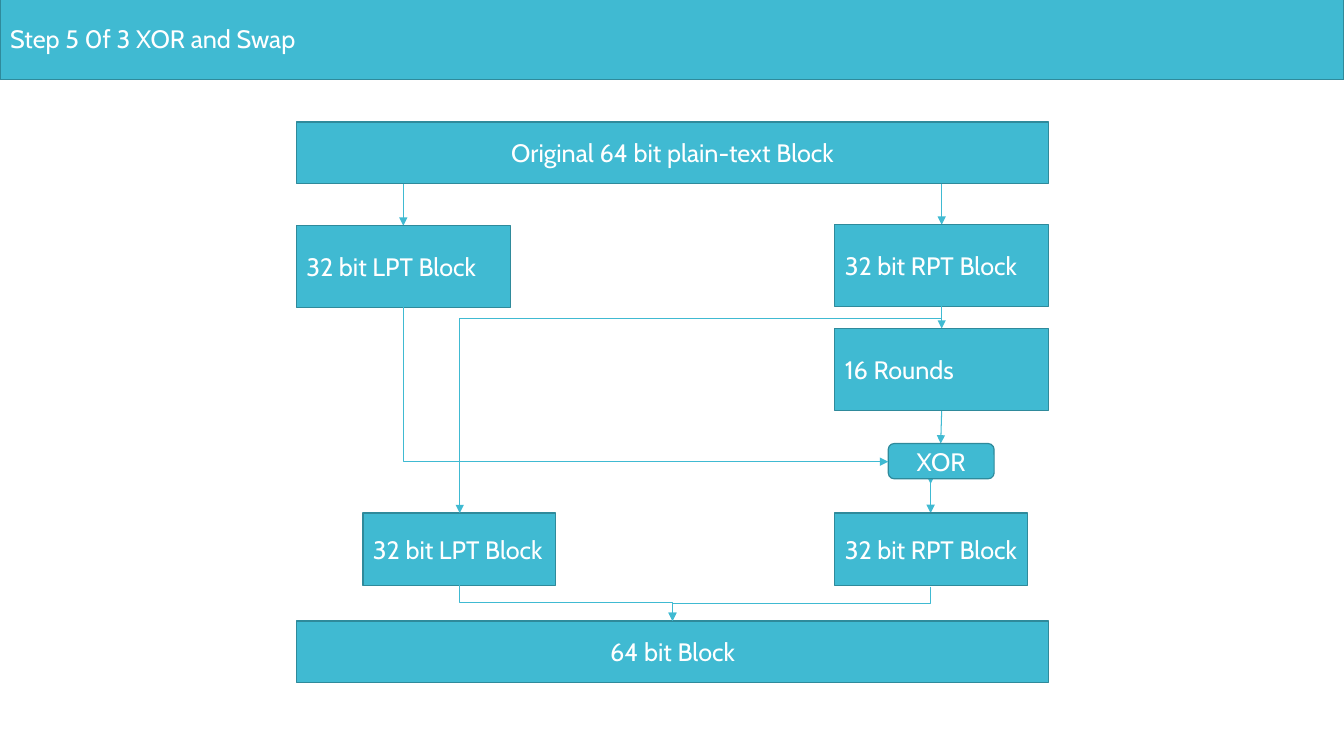
from dataclasses import dataclass

import pptx
import pptx.dml.color
import pptx.enum.shapes
import pptx.enum.text
import pptx.oxml
import pptx.oxml.ns
import pptx.util
from lxml import etree

Inches = pptx.util.Inches
Pt = pptx.util.Pt
RGBColor = pptx.dml.color.RGBColor
Align = pptx.enum.text.PP_ALIGN
Preset = pptx.enum.shapes.MSO_SHAPE
Connector = pptx.enum.shapes.MSO_CONNECTOR
qn = pptx.oxml.ns.qn

TEAL = RGBColor(0x40, 0xBA, 0xD2)
DARK_TEAL = RGBColor(0x2F, 0x8A, 0x9B)
WHITE = RGBColor(0xFF, 0xFF, 0xFF)
FONT = "Cabin"

LEFT_X, RIGHT_X = 2.94, 8.28
LPT_X, RPT_X = 4.0, 9.34
SWAPPED_LPT_X, SWAPPED_RPT_X = 4.56, 9.23
MERGE = (6.67, 6.16)


@dataclass(frozen=True)
class Block:
    text: str
    left: float
    top: float
    width: float
    height: float
    align: Align = Align.LEFT
    preset: Preset = Preset.RECTANGLE


@dataclass(frozen=True)
class Arrow:
    start: tuple[float, float]
    end: tuple[float, float]


@dataclass(frozen=True)
class Elbow(Arrow):
    """An arrow that leaves downwards; bend is the share of the drop before it turns."""
    bend: float = 0.5


BLOCKS = [
    Block("Original 64 bit plain-text Block", LEFT_X, 1.21, 7.46, 0.61, Align.CENTER),
    Block("32 bit RPT Block", RIGHT_X, 2.23, 2.12, 0.81),
    Block("16 Rounds", RIGHT_X, 3.26, 2.12, 0.81),
    Block("32 bit LPT Block", LEFT_X, 2.24, 2.12, 0.81),
    Block("32 bit LPT Block", 3.6, 5.09, 1.91, 0.72),
    Block("32 bit RPT Block", RIGHT_X, 5.09, 1.91, 0.72),
    Block("XOR", 8.81, 4.4, 1.05, 0.35, Align.CENTER, Preset.ROUNDED_RECTANGLE),
    Block("64 bit Block", LEFT_X, 6.16, 7.46, 0.61, Align.CENTER),
]

ARROWS = [
    Arrow((RPT_X, 1.82), (RPT_X, 2.23)),
    Arrow((RPT_X, 3.04), (RPT_X, 3.26)),
    Arrow((LPT_X, 1.82), (LPT_X, 2.24)),
    Arrow((RPT_X, 4.07), (9.33, 4.4)),
    Arrow((SWAPPED_RPT_X, 4.48), (SWAPPED_RPT_X, 4.8)),
    Arrow((SWAPPED_RPT_X, 4.72), (SWAPPED_RPT_X, 5.09)),
]

ELBOWS = [
    Elbow((LPT_X, 3.04), (8.81, 4.58), bend=1),
    Elbow((RPT_X, 3.04), (SWAPPED_LPT_X, 5.09), bend=0.06),
    Elbow((SWAPPED_LPT_X, 5.8), MERGE),
    Elbow((SWAPPED_RPT_X, 5.82), MERGE),
]


def write_text(shape, text: str, *, align: Align = Align.LEFT, size: float = 18,
               color: RGBColor = WHITE) -> None:
    frame = shape.text_frame
    frame.word_wrap = True
    frame.auto_size = pptx.enum.text.MSO_AUTO_SIZE.NONE
    frame.vertical_anchor = pptx.enum.text.MSO_ANCHOR.MIDDLE
    frame.margin_left = frame.margin_right = Inches(0.1)
    frame.margin_top = frame.margin_bottom = Inches(0.05)
    paragraph = frame.paragraphs[0]
    paragraph.alignment = align
    paragraph.line_spacing = 1.0
    paragraph.space_before = Pt(0)
    run = paragraph.add_run()
    run.text = text
    run.font.name = FONT
    run.font.size = Pt(size)
    run.font.color.rgb = color


def paint(shape) -> None:
    shape.fill.solid()
    shape.fill.fore_color.rgb = TEAL
    shape.line.color.rgb = DARK_TEAL
    shape.line.width = Pt(0.85)


def add_block(slide, block: Block) -> None:
    shape = slide.shapes.add_shape(
        block.preset, Inches(block.left), Inches(block.top),
        Inches(block.width), Inches(block.height))
    shape.shadow.inherit = False
    paint(shape)
    write_text(shape, block.text, align=block.align)


def add_arrow(slide, arrow: Arrow, kind: Connector = Connector.STRAIGHT):
    connector = slide.shapes.add_connector(
        kind, *(Inches(value) for value in arrow.start + arrow.end))
    connector.line.color.rgb = TEAL
    connector.line.width = Pt(0.75)
    etree.SubElement(connector.line._get_or_add_ln(), qn("a:tailEnd"), type="triangle")
    etree.SubElement(connector._element.spPr, qn("a:effectLst"))
    return connector


def add_elbow(slide, elbow: Elbow) -> None:
    """Turn the elbow preset a quarter so that it starts and ends vertically."""
    connector = add_arrow(slide, elbow, Connector.ELBOW)
    (x0, y0), (x1, y1) = elbow.start, elbow.end
    drop, reach = y1 - y0, abs(x1 - x0)
    connector.left = Inches((x0 + x1 - drop) / 2)
    connector.top = Inches((y0 + y1 - reach) / 2)
    connector.width, connector.height = Inches(drop), Inches(reach)

    properties = connector._element.spPr
    frame = properties.find(qn("a:xfrm"))
    goes_right = x1 > x0
    frame.set("rot", str((270 if goes_right else 90) * 60000))
    frame.set("flipH", "1" if goes_right else "0")
    geometry = properties.find(qn("a:prstGeom"))
    if elbow.bend == 1:
        geometry.set("prst", "bentConnector2")
    else:
        guides = geometry.find(qn("a:avLst"))
        etree.SubElement(guides, qn("a:gd"), name="adj1",
                         fmla=f"val {round(elbow.bend * 100000)}")


def add_title(slide, text: str) -> None:
    title = slide.shapes.title
    title.left, title.top = Inches(0), Inches(-0.02)
    title.width, title.height = Inches(13.33), Inches(0.81)
    paint(title)
    write_text(title, text)


def main() -> None:
    presentation = pptx.Presentation()
    presentation.slide_width = Inches(13.33)
    presentation.slide_height = Inches(7.5)
    slide = presentation.slides.add_slide(presentation.slide_layouts.get_by_name("Title Only"))
    add_title(slide, "Step 5 0f 3 XOR and Swap")
    for arrow in ARROWS:
        add_arrow(slide, arrow)
    for block in BLOCKS:
        add_block(slide, block)
    for elbow in ELBOWS:
        add_elbow(slide, elbow)
    presentation.save("out.pptx")


if __name__ == "__main__":
    main()
